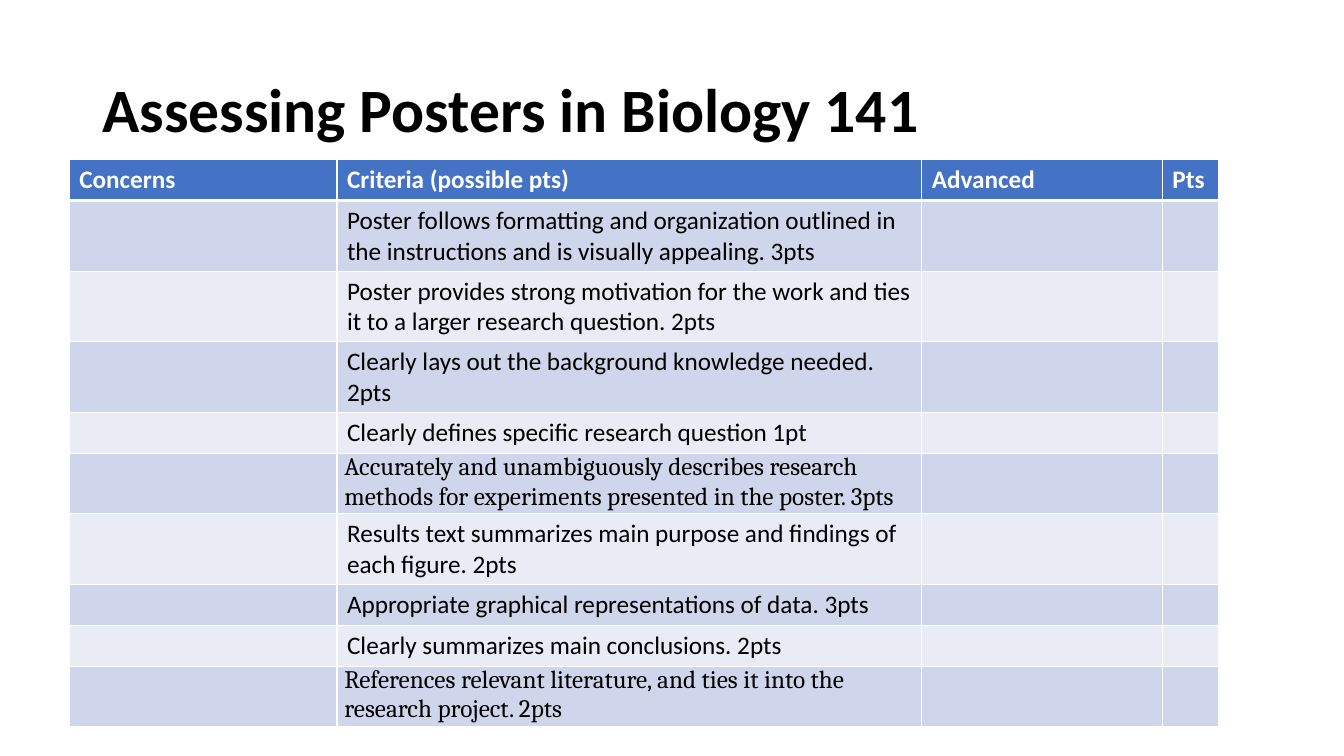
from pptx import Presentation
from pptx.dml.color import RGBColor
from pptx.enum.text import MSO_ANCHOR
from pptx.oxml import parse_xml
from pptx.oxml.ns import nsdecls
from pptx.util import Pt

PX = 9525  # EMU per px, 96 px to the inch
HEADS = ["Concerns", "Criteria (possible pts)", "Advanced", "Pts"]
WIDTHS = [255, 557, 229, 54]
ROW = 39
BANDS = ["CFD5EA", "E9EBF5"]
CRITERIA = [
    ("Poster follows formatting and organization outlined in the instructions "
     "and is visually appealing. 3pts", "Calibri"),
    ("Poster provides strong motivation for the work and ties it to a larger "
     "research question. 2pts", "Calibri"),
    ("Clearly lays out the background knowledge needed. 2pts", "Calibri"),
    ("Clearly defines specific research question 1pt", "Calibri"),
    ("Accurately and unambiguously describes research methods for experiments "
     "presented in the poster. 3pts", "Cambria"),
    ("Results text summarizes main purpose and findings of each figure. 2pts", "Calibri"),
    ("Appropriate graphical representations of data. 3pts", "Calibri"),
    ("Clearly summarizes main conclusions. 2pts", "Calibri"),
    ("References relevant literature, and ties it into the research project. 2pts",
     "Cambria"),
]


def color(code):
    return RGBColor.from_string(code)


def write(para, text, ink, **style):
    """Add one run of text in the given colour and font style."""
    run = para.add_run()
    run.text = text
    run.font.color.rgb = color(ink)
    for name, value in style.items():
        setattr(run.font, name, value)


deck = Presentation()
deck.slide_width, deck.slide_height = 1280 * PX, 720 * PX
slide = deck.slides.add_slide(deck.slide_layouts[6])

title = slide.shapes.add_textbox(88 * PX, 38 * PX, 1104 * PX, 139 * PX).text_frame
title.word_wrap = True
title.vertical_anchor = MSO_ANCHOR.MIDDLE
title.paragraphs[0].line_spacing = 0.9
write(title.paragraphs[0], "Assessing Posters in Biology 141", "000000",
      name="Calibri", size=Pt(44), bold=True)

rows = len(CRITERIA) + 1
table = slide.shapes.add_table(rows, len(HEADS), 66 * PX, 152 * PX,
                               sum(WIDTHS) * PX, rows * ROW * PX).table
for col, width in zip(table.columns, WIDTHS):
    col.width = width * PX
for row in table.rows:
    row.height = ROW * PX

# White grid, thicker under the header, over banded fills
for r in range(rows):
    for c in range(len(HEADS)):
        cell = table.cell(r, c)
        props = cell._tc.get_or_add_tcPr()
        for side in "LRTB":
            thick = (r, side) in [(0, "B"), (1, "T")]
            props.append(parse_xml(
                f'<a:ln{side} {nsdecls("a")} w="{Pt(3 if thick else 1)}"><a:solidFill>'
                f'<a:srgbClr val="FFFFFF"/></a:solidFill></a:ln{side}>'))
        cell.fill.solid()
        cell.fill.fore_color.rgb = color(BANDS[(r - 1) % 2] if r else "4472C4")

for c, head in enumerate(HEADS):
    write(table.cell(0, c).text_frame.paragraphs[0], head, "FFFFFF",
          name="Calibri", size=Pt(18), bold=True)

for r, (text, face) in enumerate(CRITERIA, 1):
    cell = table.cell(r, 1)
    if face == "Cambria":
        cell.margin_left = cell.margin_right = 7 * PX
        cell.margin_top = cell.margin_bottom = 0
    write(cell.text_frame.paragraphs[0], text, "000000",
          name=face, size=Pt(18), bold=False)

deck.save("out.pptx")
